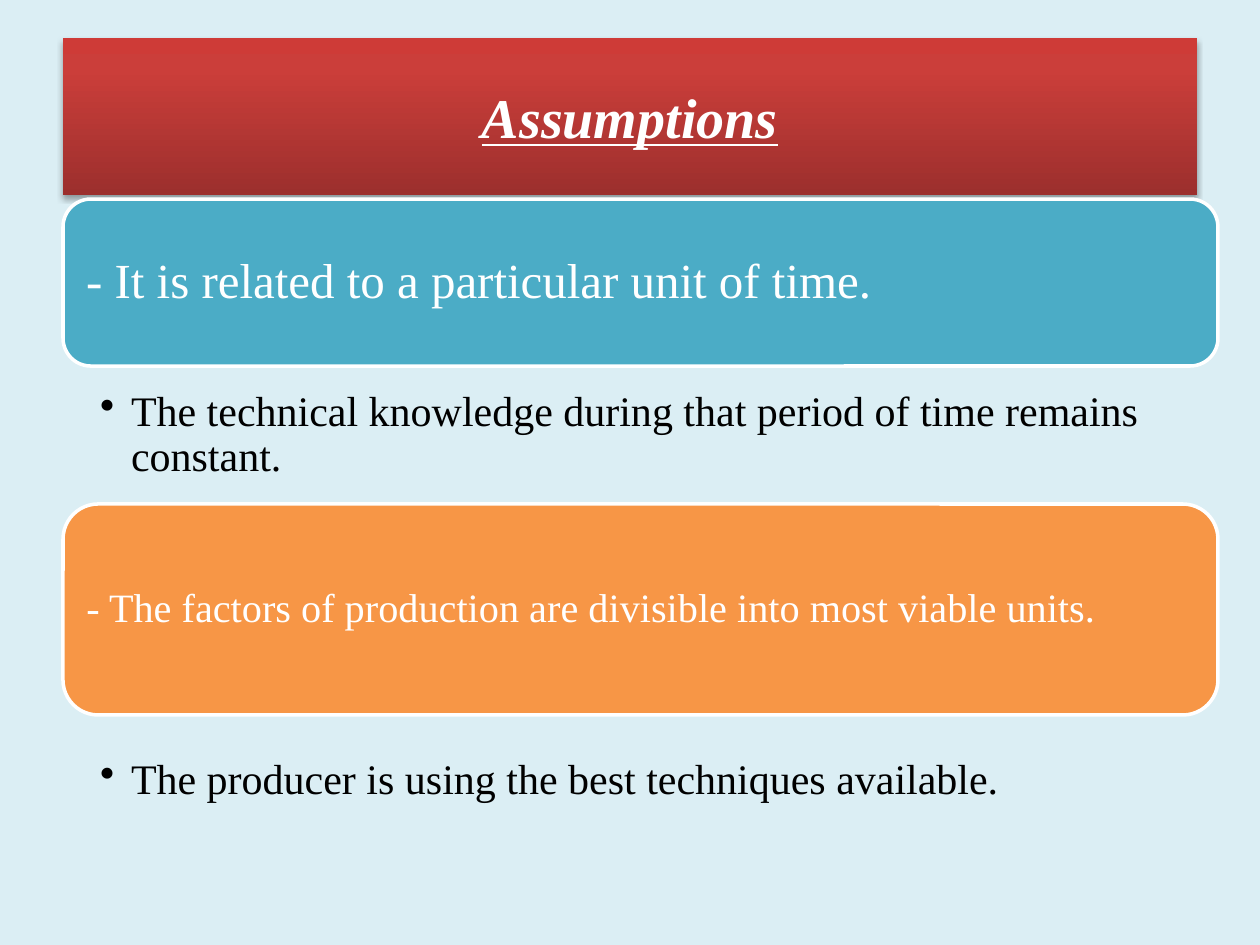
from dataclasses import dataclass

from lxml import etree
from pptx import Presentation
from pptx.dml.color import RGBColor
from pptx.enum.shapes import MSO_SHAPE
from pptx.enum.text import MSO_ANCHOR, PP_ALIGN
from pptx.oxml import parse_xml
from pptx.oxml.ns import qn
from pptx.util import Emu, Pt

RECTANGLE = MSO_SHAPE.RECTANGLE
ROUNDED = MSO_SHAPE.ROUNDED_RECTANGLE
TOP, MIDDLE = MSO_ANCHOR.TOP, MSO_ANCHOR.MIDDLE
LEFT, CENTER = PP_ALIGN.LEFT, PP_ALIGN.CENTER

EMU_PER_INCH = 914400
PX_PER_INCH = 126
MARGIN = 63
TITLE_WIDTH = 1134
CONTENT_WIDTH = 1155
BULLET_INDENT = 31
FONT = "Times New Roman"
DRAWING_NS = "http://schemas.openxmlformats.org/drawingml/2006/main"
COLORS = {
    "background": "DBEEF4",
    "teal": "4BACC6",
    "orange": "F79646",
    "white": "FFFFFF",
    "black": "000000",
}
TITLE_GRADIENT = ((0, "9C2F2D"), (80, "CB3E3A"), (100, "CE3B37"))


@dataclass(frozen=True)
class Band:
    text: str
    top: int
    height: int
    color: str
    size: int
    inset: int


@dataclass(frozen=True)
class Bullet:
    text: str
    top: int
    height: int


BANDS = (
    Band("- It is related to a particular unit of time.", 199, 167, "teal", 28, 15),
    Band("- The factors of production are divisible into most viable units.",
         504, 211, "orange", 23, 13),
)
BULLETS = (
    Bullet("The technical knowledge during that period of time remains constant.", 386, 128),
    Bullet("The producer is using the best techniques available.", 754, 57),
)


def px(length: int) -> Emu:
    return Emu(round(length * EMU_PER_INCH / PX_PER_INCH))


def color(name: str) -> RGBColor:
    return RGBColor.from_string(COLORS[name])


def add_text(shape, text: str, size: int, color_name: str, align=LEFT,
             anchor=MIDDLE, insets=(13, 6, 13, 6), spacing: float = 0.9):
    frame = shape.text_frame
    frame.word_wrap = True
    frame.vertical_anchor = anchor
    frame.margin_left, frame.margin_top, frame.margin_right, frame.margin_bottom = map(px, insets)
    paragraph = frame.paragraphs[0]
    paragraph.alignment = align
    paragraph.line_spacing = spacing
    run = paragraph.add_run()
    run.text = text
    run.font.name = FONT
    run.font.size = Pt(size)
    run.font.color.rgb = color(color_name)
    return paragraph


def add_title(slide, text: str) -> None:
    shape = slide.shapes.add_shape(RECTANGLE, px(MARGIN), px(38), px(TITLE_WIDTH), px(157))
    shape.line.fill.background()
    shape.shadow.inherit = False
    shape.fill.gradient()
    shape.fill.gradient_angle = 90
    properties = shape.element.spPr
    stops = properties.find(f"{qn('a:gradFill')}/{qn('a:gsLst')}")
    for stop in list(stops):
        stops.remove(stop)
    for position, value in TITLE_GRADIENT:
        stop = etree.SubElement(stops, qn("a:gs"), pos=str(position * 1000))
        etree.SubElement(stop, qn("a:srgbClr"), val=value)
    properties.find(qn("a:effectLst")).append(parse_xml(
        f'<a:outerShdw xmlns:a="{DRAWING_NS}" blurRad="{Pt(3.1)}" dist="{Pt(1.8)}" '
        f'dir="5400000" rotWithShape="0"><a:srgbClr val="{COLORS["black"]}">'
        '<a:alpha val="35000"/></a:srgbClr></a:outerShdw>'))
    paragraph = add_text(shape, text, 32, "white", align=CENTER, spacing=1.0)
    font = paragraph.runs[0].font
    font.bold = font.italic = font.underline = True


def add_band(slide, band: Band) -> None:
    shape = slide.shapes.add_shape(
        ROUNDED, px(MARGIN), px(band.top), px(CONTENT_WIDTH), px(band.height))
    shape.shadow.inherit = False
    shape.fill.solid()
    shape.fill.fore_color.rgb = color(band.color)
    shape.line.color.rgb = color("white")
    shape.line.width = Pt(2)
    add_text(shape, band.text, band.size, "white", insets=(band.inset,) * 4)


def add_bullet(slide, bullet: Bullet) -> None:
    box = slide.shapes.add_textbox(
        px(MARGIN), px(bullet.top), px(CONTENT_WIDTH), px(bullet.height))
    paragraph = add_text(box, bullet.text, 24, "black", anchor=TOP, insets=(37, 4, 24, 4))
    paragraph.level = 1
    properties = paragraph._p.get_or_add_pPr()
    properties.set("marL", str(px(BULLET_INDENT)))
    properties.set("indent", str(-px(BULLET_INDENT)))
    etree.SubElement(properties, qn("a:buChar"), char="•")


def main() -> None:
    presentation = Presentation()
    presentation.slide_width = px(1260)
    presentation.slide_height = px(945)
    slide = presentation.slides.add_slide(presentation.slide_layouts[6])
    slide.background.fill.solid()
    slide.background.fill.fore_color.rgb = color("background")
    add_title(slide, "Assumptions")
    for band, bullet in zip(BANDS, BULLETS):
        add_band(slide, band)
        add_bullet(slide, bullet)
    presentation.save("out.pptx")


if __name__ == "__main__":
    main()
